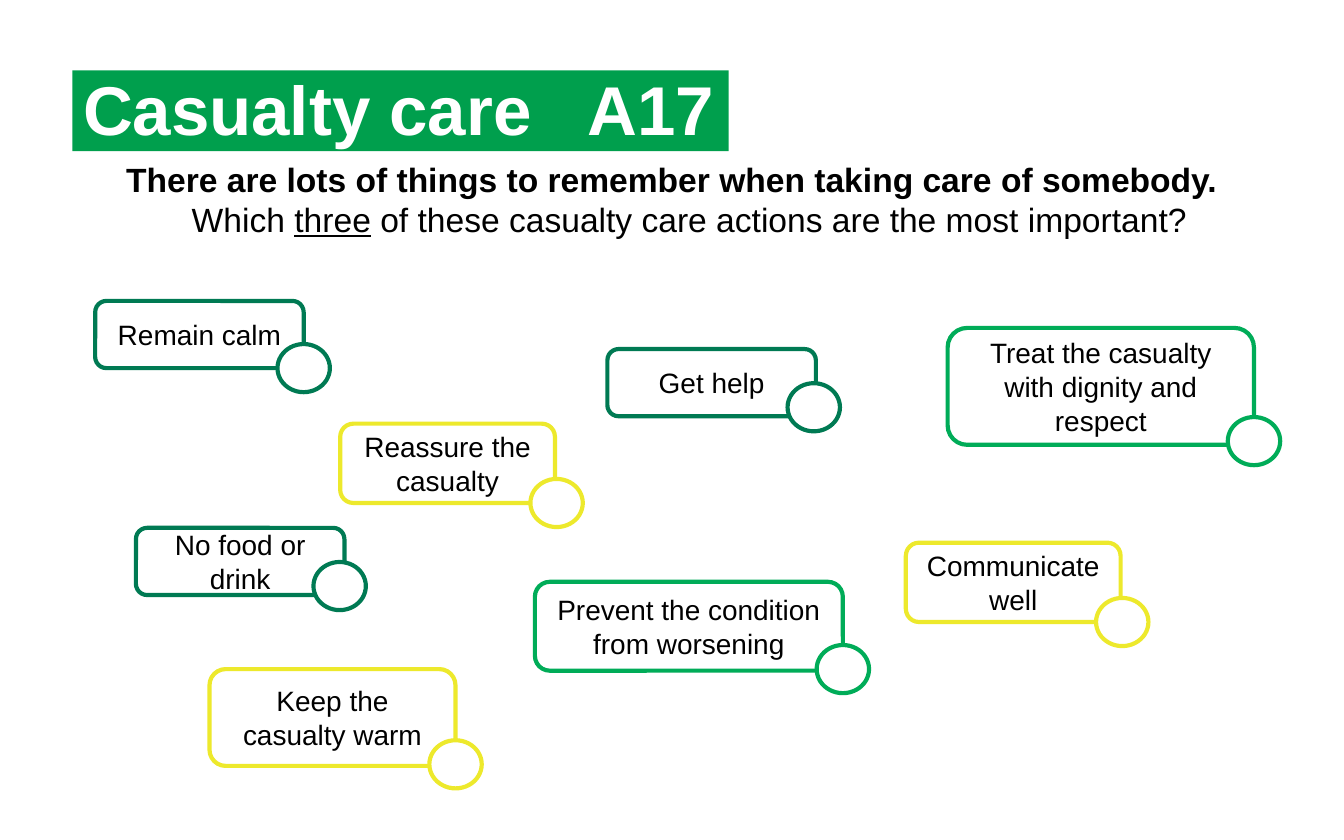
from lxml import etree
from pptx import Presentation
from pptx.dml.color import RGBColor
from pptx.enum import shapes, text
from pptx.oxml.ns import qn
from pptx.util import Cm, Pt

BLACK = RGBColor(0x00, 0x00, 0x00)
WHITE = RGBColor(0xFF, 0xFF, 0xFF)
BANNER_GREEN = RGBColor(0x00, 0x9F, 0x4D)
DARK_GREEN = RGBColor(0x00, 0x7A, 0x53)
LIGHT_GREEN = RGBColor(0x00, 0xAC, 0x58)
YELLOW = RGBColor(0xED, 0xE9, 0x2C)

SHORT = (3.94, 1.27)
MEDIUM = (4.06, 1.5)
TICK_WIDTH, TICK_HEIGHT = 0.99, 0.91

# Wording, colour, (left, top), (width, height), tick circle's shift from the corner; all in cm
ACTIONS = [
    ("Remain calm", DARK_GREEN, (1.8, 5.69), SHORT, (0, 0)),
    ("Reassure the casualty", YELLOW, (6.43, 8.01), MEDIUM, (0.03, 0)),
    ("Treat the casualty with dignity and respect", LIGHT_GREEN,
     (17.91, 6.2), (5.79, 2.21), (0, -0.07)),
    ("Get help", DARK_GREEN, (11.48, 6.6), SHORT, (-0.04, -0.17)),
    ("Communicate well", YELLOW, (17.12, 10.26), MEDIUM, (0.03, 0)),
    ("Prevent the condition from worsening", LIGHT_GREEN,
     (10.11, 11), (5.82, 1.68), (0, -0.03)),
    ("No food or drink", DARK_GREEN, (2.57, 9.98), SHORT, (-0.09, -0.17)),
    ("Keep the casualty warm", YELLOW, (3.96, 12.65), (4.65, 1.83), (0, -0.03)),
]


def apply(target, formats):
    for name, value in formats.items():
        setattr(target, name, value)


def style_font(font, size, colour, **formats):
    apply(font, {"name": "Arial", "size": Pt(size), **formats})
    font.color.rgb = colour


def style_frame(frame, anchor):
    apply(frame, {
        "word_wrap": True, "auto_size": text.MSO_AUTO_SIZE.NONE, "vertical_anchor": anchor,
        "margin_left": Cm(0.2), "margin_right": Cm(0.2),
        "margin_top": Cm(0.1), "margin_bottom": Cm(0.1),
    })


def add_banner(slide, left, top, width, height):
    banner = slide.shapes.title
    apply(banner, {"left": Cm(left), "top": Cm(top), "width": Cm(width), "height": Cm(height)})
    banner.fill.solid()
    banner.fill.fore_color.rgb = BANNER_GREEN
    style_frame(banner.text_frame, text.MSO_ANCHOR.TOP)
    heading = banner.text_frame.paragraphs[0]
    heading.text = "Casualty care\tA17"
    apply(heading, {"alignment": text.PP_ALIGN.LEFT, "line_spacing": 0.9})
    stops = etree.SubElement(heading._p.get_or_add_pPr(), qn("a:tabLst"))
    etree.SubElement(stops, qn("a:tab"), pos=str(Cm(9.53)), algn="l")
    style_font(heading.font, 37, WHITE, bold=True)


def add_question(slide, left, top, width, height):
    question = slide.shapes.add_textbox(Cm(left), Cm(top), Cm(width), Cm(height))
    style_frame(question.text_frame, text.MSO_ANCHOR.TOP)
    paragraph = question.text_frame.paragraphs[0]
    apply(paragraph, {"alignment": text.PP_ALIGN.CENTER, "space_after": Pt(5)})
    indent = paragraph._p.get_or_add_pPr()
    indent.set("marL", str(Cm(0.66)))
    indent.set("indent", str(Cm(-0.66)))
    style_font(paragraph.font, 18, BLACK)

    def add_run(words, **formats):
        run = paragraph.add_run()
        run.text = words
        style_font(run.font, 18, BLACK, **formats)

    add_run("There are lots of things to remember when taking care of somebody.", bold=True)
    paragraph.add_line_break()
    add_run("Which ")
    add_run("three", underline=True)
    add_run(" of these casualty care actions are the most important?")


def add_outlined(slide, kind, colour, left, top, width, height):
    outlined = slide.shapes.add_shape(kind, Cm(left), Cm(top), Cm(width), Cm(height))
    outlined.shadow.inherit = False
    outlined.line.color.rgb = colour
    outlined.line.width = Pt(2.25)
    return outlined


def add_action(slide, wording, colour, position, size, shift):
    """Add a card with a tick circle on its lower right corner."""
    (left, top), (width, height), (shift_x, shift_y) = position, size, shift
    card = add_outlined(slide, shapes.MSO_SHAPE.ROUNDED_RECTANGLE, colour,
                        left, top, width, height)
    card.fill.background()
    apply(card.text_frame, {"word_wrap": True, "vertical_anchor": text.MSO_ANCHOR.MIDDLE})
    label = card.text_frame.paragraphs[0]
    label.text = wording
    label.alignment = text.PP_ALIGN.CENTER
    style_font(label.runs[0].font, 15, BLACK)

    tick = add_outlined(slide, shapes.MSO_SHAPE.OVAL, colour,
                        left + width + shift_x - TICK_WIDTH / 2,
                        top + height + shift_y - TICK_HEIGHT / 2,
                        TICK_WIDTH, TICK_HEIGHT)
    tick.fill.solid()
    tick.fill.fore_color.rgb = WHITE


def main():
    deck = Presentation()
    apply(deck, {"slide_width": Cm(25.4), "slide_height": Cm(15.88)})
    slide = deck.slides.add_slide(deck.slide_layouts.get_by_name("Title Only"))
    add_banner(slide, 1.37, 1.33, 12.4, 1.53)
    add_question(slide, 0, 2.9, 25.4, 1.96)
    for action in ACTIONS:
        add_action(slide, *action)
    deck.save("out.pptx")


if __name__ == "__main__":
    main()
